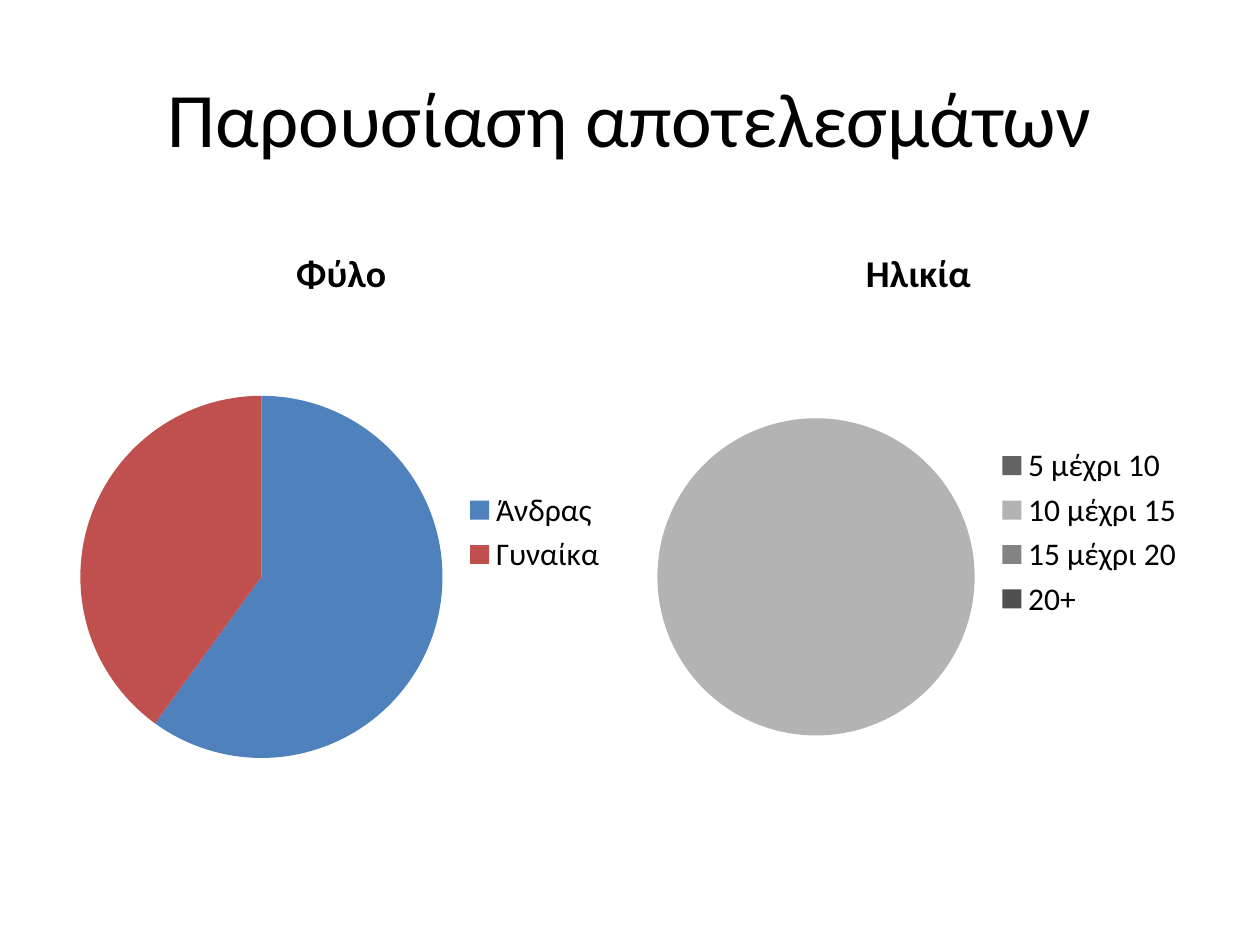
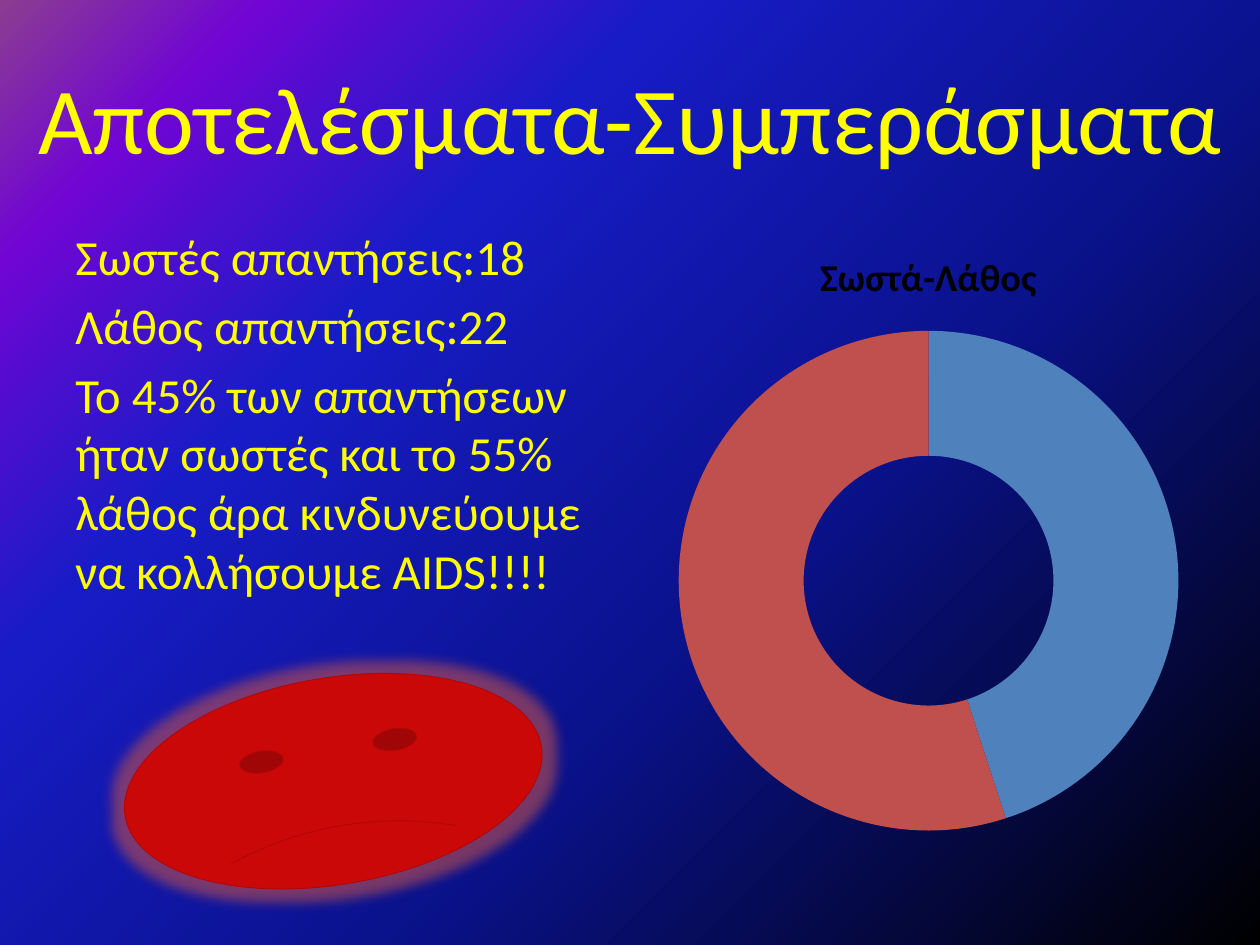
"""Build two slides presenting survey results with charts."""
from lxml.etree import SubElement
from pptx import Presentation
from pptx.chart.data import CategoryChartData
from pptx.dml.color import RGBColor
from pptx.enum.chart import XL_CHART_TYPE, XL_LEGEND_POSITION
from pptx.enum.shapes import MSO_SHAPE
from pptx.enum.text import MSO_ANCHOR, PP_ALIGN
from pptx.oxml import parse_xml
from pptx.oxml.ns import nsdecls, qn
from pptx.util import Inches, Pt

FONT = "Calibri"
BLACK, YELLOW = "000000", "FFFF00"
BLUE, BRICK = "4F81BD", "C0504D"
FACE_RED, FACE_LINE = "CA0808", "B00606"
GRAYS = ["636363", "B3B3B3", "848484", "505050"]
GRADIENT = [(0, BLACK), (40, "0A128C"), (70, "181CC7"), (88, "7005D4"), (100, "8C3D91")]
CHART_WIDTH, CHART_HEIGHT = 4.42, 4.95


def add_text(page, left, top, width, height, lines, size, color, title=False):
    box = page.shapes.add_textbox(Inches(left), Inches(top), Inches(width), Inches(height))
    frame = box.text_frame
    frame.word_wrap = True
    frame.vertical_anchor = MSO_ANCHOR.MIDDLE if title else MSO_ANCHOR.TOP
    for index, line in enumerate(lines):
        para = frame.paragraphs[0] if index == 0 else frame.add_paragraph()
        para.text = line
        para.alignment = PP_ALIGN.CENTER if title else PP_ALIGN.LEFT
        para.space_before = Pt(0 if index == 0 else 5.6)
        para.font.name = FONT
        para.font.size = Pt(size)
        para.font.color.rgb = RGBColor.from_string(color)


def add_round_chart(page, kind, left, top, name, categories, values, colors, legend=True):
    data = CategoryChartData()
    data.categories = categories
    data.add_series(name, values)
    chart = page.shapes.add_chart(kind, Inches(left), Inches(top), Inches(CHART_WIDTH),
                                  Inches(CHART_HEIGHT), data).chart
    chart.font.name = FONT
    chart.font.size = Pt(18)
    chart.font.color.rgb = RGBColor.from_string(BLACK)
    chart.has_title = True
    chart.chart_title.include_in_layout = False
    para = chart.chart_title.text_frame.paragraphs[0]
    para.text = name
    para.font.name = FONT
    para.font.size = Pt(21.6)
    para.font.bold = True
    para.font.color.rgb = RGBColor.from_string(BLACK)
    chart.has_legend = legend
    if legend:
        chart.legend.position = XL_LEGEND_POSITION.RIGHT
        chart.legend.include_in_layout = False
    plot = chart.plots[0]
    plot.vary_by_categories = True
    for index, color in enumerate(colors):
        fill = plot.series[0].points[index].format.fill
        fill.solid()
        fill.fore_color.rgb = RGBColor.from_string(color)


deck = Presentation()
deck.slide_width, deck.slide_height = Inches(10), Inches(7.5)
blank = deck.slide_layouts[6]

page = deck.slides.add_slide(blank)
add_text(page, 0.5, 0.3, 9, 1.25, ["Παρουσίαση αποτελεσμάτων"], 44, BLACK, title=True)
add_round_chart(page, XL_CHART_TYPE.PIE, 0.5, 1.75, "Φύλο",
                ["Άνδρας", "Γυναίκα"], [60, 40], [BLUE, BRICK])
add_round_chart(page, XL_CHART_TYPE.PIE, 5.08, 1.75, "Ηλικία",
                ["5 μέχρι 10", "10 μέχρι 15", "15 μέχρι 20", "20+"], [0, 100, 0, 0], GRAYS)

page = deck.slides.add_slide(blank)
backdrop = page.background.fill
backdrop.gradient()
backdrop.gradient_angle = 135
stops = next(page.element.iter(qn("a:gsLst")))
for stop in list(stops):
    stops.remove(stop)
for position, color in GRADIENT:
    stop = SubElement(stops, qn("a:gs"), pos=str(position * 1000))
    SubElement(stop, qn("a:srgbClr"), val=color)

add_text(page, 0, 0.3, 10, 1.25, ["Αποτελέσματα-Συμπεράσματα"], 54, YELLOW, title=True)
findings = [
    "Σωστές απαντήσεις:18",
    "Λάθος απαντήσεις:22",
    "Το 45% των απαντήσεων ήταν σωστές και το 55% λάθος άρα κινδυνεύουμε "
    "να κολλήσουμε AIDS!!!!",
]
add_text(page, 0.5, 1.75, CHART_WIDTH, CHART_HEIGHT, findings, 28, YELLOW)
add_round_chart(page, XL_CHART_TYPE.DOUGHNUT, 5.16, 1.78, "Σωστά-Λάθος",
                ["1", "2"], [45, 55], [BLUE, BRICK], legend=False)

face = page.shapes.add_shape(MSO_SHAPE.SMILEY_FACE, Inches(0.97), Inches(5.38),
                             Inches(3.35), Inches(1.64))
face.adjustments[0] = -0.047
face.rotation = -9.6
face.fill.solid()
face.fill.fore_color.rgb = RGBColor.from_string(FACE_RED)
face.line.color.rgb = RGBColor.from_string(FACE_LINE)
face.line.width = Pt(0.5)
face.shadow.inherit = False
effects = next(face.element.iter(qn("a:effectLst")))
effects.append(parse_xml(
    f'<a:glow {nsdecls("a")} rad="{Pt(14)}"><a:srgbClr val="{BRICK}">'
    '<a:alpha val="60000"/></a:srgbClr></a:glow>'))

deck.save("out.pptx")
